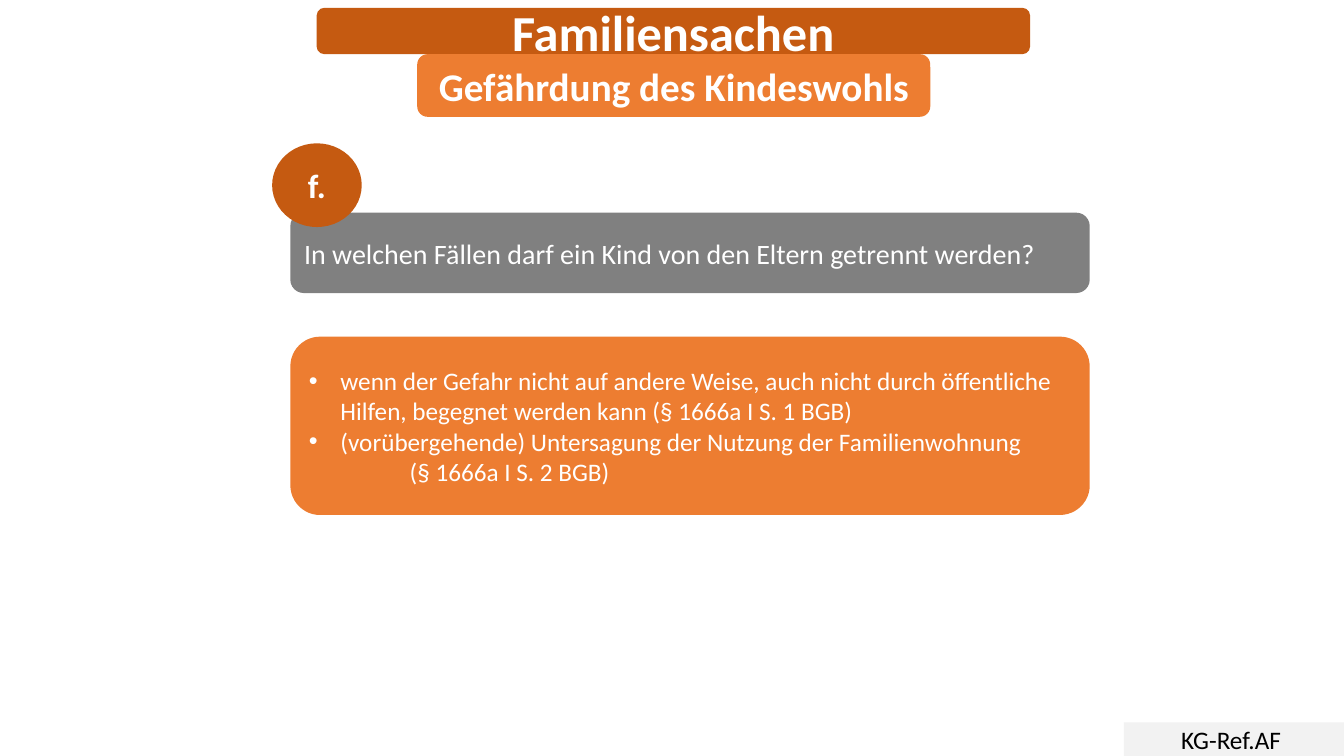
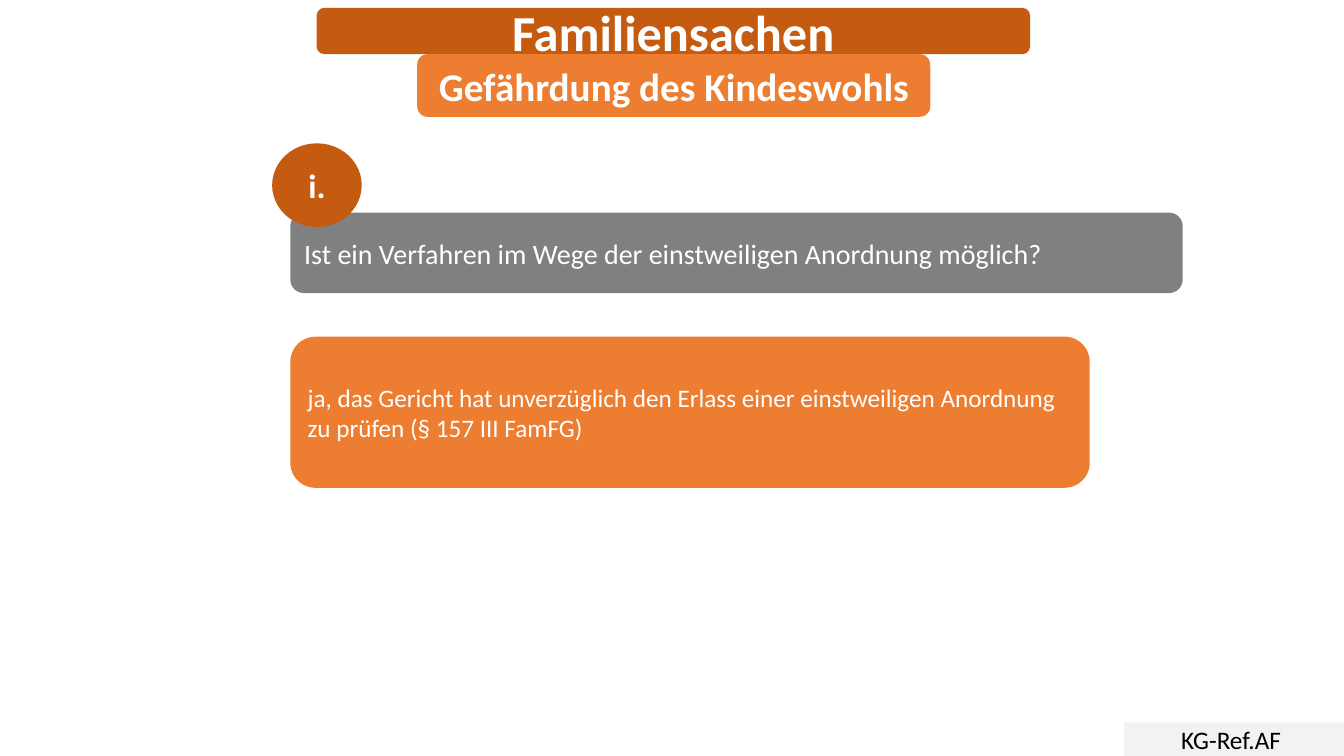
from pptx import Presentation
from pptx.dml.color import RGBColor
from pptx.enum.shapes import MSO_SHAPE
from pptx.enum.text import MSO_ANCHOR, PP_ALIGN
from pptx.oxml.ns import qn
from pptx.util import Pt
from lxml.etree import SubElement

RUST = RGBColor(0xC5, 0x5A, 0x11)
ORANGE = RGBColor(0xED, 0x7D, 0x31)
GRAY = RGBColor(0x80, 0x80, 0x80)
PALE = RGBColor(0xF2, 0xF2, 0xF2)
WHITE = RGBColor(0xFF, 0xFF, 0xFF)
BLACK = RGBColor(0, 0, 0)

PLAIN, BULLET, INDENTED = range(3)


class Deck:
    font = "Calibri"
    content_left = 207.4
    content_width = 571
    bullet_indent = 22.5
    tab_indent = 72

    def __init__(self):
        self.prs = Presentation()
        self.prs.slide_width, self.prs.slide_height = Pt(960), Pt(540)
        self.s = None

    def new_slide(self):
        self.s = self.prs.slides.add_slide(self.prs.slide_layouts[6])

    def box(self, area, fill, lines, size, bold=False, color=WHITE,
            align=PP_ALIGN.CENTER, kind=MSO_SHAPE.ROUNDED_RECTANGLE):
        sp = self.s.shapes.add_shape(kind, *map(Pt, area))
        sp.shadow.inherit = False
        sp.fill.solid()
        sp.fill.fore_color.rgb = fill
        sp.line.fill.background()
        tf = sp.text_frame
        tf.word_wrap = True
        tf.vertical_anchor = MSO_ANCHOR.MIDDLE
        style = {"name": self.font, "size": Pt(size), "bold": bold}
        for i, (text, level) in enumerate(lines):
            p = tf.add_paragraph() if i else tf.paragraphs[0]
            p.alignment = align
            self.indent(p, level)
            r = p.add_run()
            r.text = text
            for key, value in style.items():
                setattr(r.font, key, value)
            r.font.color.rgb = color

    def indent(self, p, level):
        if level == PLAIN:
            return
        pPr = p._p.get_or_add_pPr()
        if level == INDENTED:
            pPr.set("marL", str(Pt(self.tab_indent)))
            return
        pPr.set("marL", str(Pt(self.bullet_indent)))
        pPr.set("indent", str(-Pt(self.bullet_indent)))
        SubElement(pPr, qn("a:buFont")).set("typeface", "Arial")
        SubElement(pPr, qn("a:buChar")).set("char", "•")

    def header(self, title, subtitle):
        self.box((226.2, 5.6, 509.6, 33.1), RUST, [(title, PLAIN)], 36, True)
        self.box((298, 38.7, 366.5, 44.8), ORANGE, [(subtitle, PLAIN)], 28, True)

    def question(self, letter, text, width):
        self.box((self.content_left, 151.9, width, 57.4), GRAY,
                 [(text, PLAIN)], 20, align=PP_ALIGN.LEFT)
        self.box((194.4, 102.4, 64, 59.8), RUST, [(letter, PLAIN)], 24, True,
                 kind=MSO_SHAPE.FLOWCHART_CONNECTOR)

    def answer(self, lines, height):
        self.box((self.content_left, 240.5, self.content_width, height), ORANGE,
                 lines, 18, align=PP_ALIGN.LEFT)

    def footer(self, text):
        self.box((802.8, 516, 157.2, 24), PALE, [(text, PLAIN)], 18,
                 color=BLACK, kind=MSO_SHAPE.RECTANGLE)


SLIDES = [
    ("f.", "In welchen Fällen darf ein Kind von den Eltern getrennt werden?", 571, [
        ("wenn der Gefahr nicht auf andere Weise, auch nicht durch öffentliche "
         "Hilfen, begegnet werden kann (§ 1666a I S. 1 BGB)", BULLET),
        ("(vorübergehende) Untersagung der Nutzung der Familienwohnung", BULLET),
        ("(§ 1666a I S. 2 BGB)", INDENTED),
    ], 127.4),
    ("i.", "Ist ein Verfahren im Wege der einstweiligen Anordnung möglich?", 637.4, [
        ("ja, das Gericht hat unverzüglich den Erlass einer einstweiligen "
         "Anordnung zu prüfen (§ 157 III FamFG)", PLAIN),
    ], 108),
]


def main():
    deck = Deck()
    for letter, question, width, answer, height in SLIDES:
        deck.new_slide()
        deck.header("Familiensachen", "Gefährdung des Kindeswohls")
        deck.question(letter, question, width)
        deck.answer(answer, height)
        deck.footer("KG-Ref.AF ")
    deck.prs.save("out.pptx")


if __name__ == "__main__":
    main()
